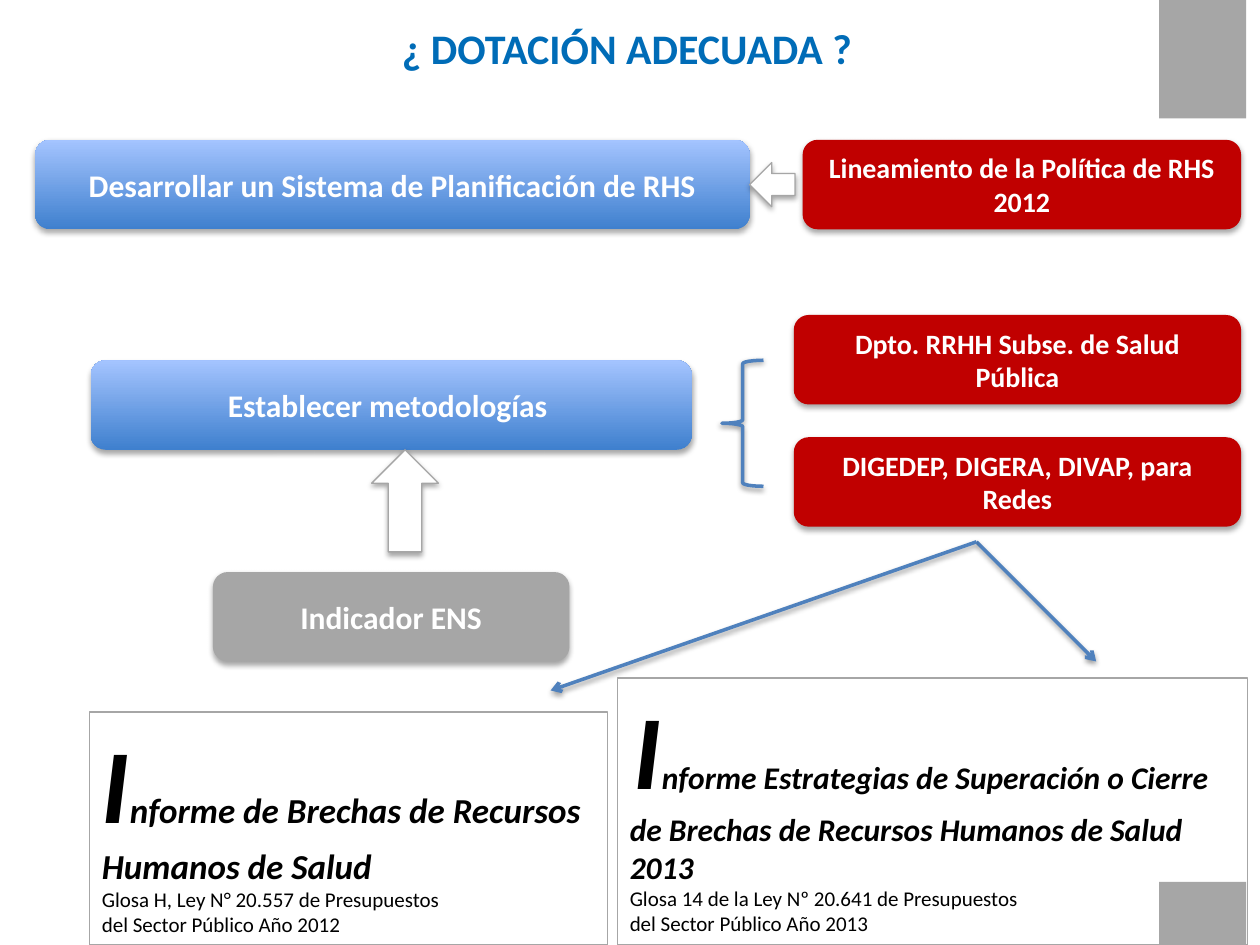
import pptx
import pptx.dml.color
import pptx.enum.dml
import pptx.enum.shapes
import pptx.enum.text
import pptx.oxml
import pptx.util
from lxml import etree

Inches = pptx.util.Inches
Pt = pptx.util.Pt
RGBColor = pptx.dml.color.RGBColor
Shape = pptx.enum.shapes.MSO_SHAPE
Align = pptx.enum.text.PP_ALIGN
Anchor = pptx.enum.text.MSO_ANCHOR

BLUE = RGBColor(0x00, 0x6C, 0xB7)
RED = RGBColor(0xC0, 0x00, 0x00)
GRAY = RGBColor(0xA6, 0xA6, 0xA6)
STEEL = RGBColor(0x4F, 0x81, 0xBD)
DEEP_BLUE = RGBColor(0x3F, 0x80, 0xCE)
PALE_BLUE = RGBColor(0xA4, 0xC4, 0xFF)
WHITE = RGBColor(0xFF, 0xFF, 0xFF)
BLACK = RGBColor(0x00, 0x00, 0x00)
GRADIENT = (DEEP_BLUE, PALE_BLUE)

SOFT = dict(color="000000", alpha=35, blur=3.1, distance=1.8, angle=90)
THIN = dict(color="000000", alpha=38, blur=3.1, distance=1.6, angle=90)


def add_text(para, text, size=18, color=BLACK, bold=False, italic=False, font="Calibri"):
    span = para.add_run()
    span.text = text
    span.font.name = font
    span.font.size = Pt(size)
    span.font.color.rgb = color
    span.font.bold = bold
    span.font.italic = italic


def set_effects(shape, shadow=None):
    effects = etree.SubElement(shape._element.spPr, pptx.oxml.ns.qn("a:effectLst"))
    if shadow:
        outer = etree.SubElement(
            effects,
            pptx.oxml.ns.qn("a:outerShdw"),
            blurRad=str(Pt(shadow["blur"])),
            dist=str(Pt(shadow["distance"])),
            dir=str(shadow["angle"] * 60000),
            rotWithShape="0",
        )
        tone = etree.SubElement(outer, pptx.oxml.ns.qn("a:srgbClr"), val=shadow["color"])
        etree.SubElement(tone, pptx.oxml.ns.qn("a:alpha"), val=str(shadow["alpha"] * 1000))


class PageBuilder:
    def __init__(self, page):
        self.page = page

    def shape(self, kind, bounds, fill=None, line=None, width=0.75, shadow=None):
        box = self.page.shapes.add_shape(kind, *map(Inches, bounds))
        if fill is None:
            box.fill.background()
        elif fill is GRADIENT:
            box.fill.gradient()
            box.fill.gradient_angle = 90
            for stop, color in zip(box.fill.gradient_stops, fill):
                stop.color.rgb = color
        else:
            box.fill.solid()
            box.fill.fore_color.rgb = fill
        if line is None:
            box.line.fill.background()
        else:
            box.line.color.rgb = line
            box.line.width = Pt(width)
        set_effects(box, shadow)
        return box

    def title(self, text, bounds):
        box = self.page.shapes.add_textbox(*map(Inches, bounds))
        box.text_frame.word_wrap = True
        para = box.text_frame.paragraphs[0]
        para.alignment = Align.CENTER
        add_text(para, text, size=24, color=BLUE, bold=True)

    def label(self, text, bounds, fill, size=18):
        box = self.shape(Shape.ROUNDED_RECTANGLE, bounds, fill, shadow=SOFT)
        box.text_frame.vertical_anchor = Anchor.MIDDLE
        para = box.text_frame.paragraphs[0]
        para.alignment = Align.CENTER
        add_text(para, text, size=size, color=WHITE, bold=True)

    def block_arrow(self, kind, bounds):
        self.shape(kind, bounds, WHITE, GRAY, shadow=SOFT)

    def report(self, bounds, heading, size, notes, lead=""):
        frame = self.shape(Shape.RECTANGLE, bounds, line=GRAY).text_frame
        frame.vertical_anchor = Anchor.TOP
        para = frame.paragraphs[0]
        para.alignment = Align.LEFT
        if lead:
            add_text(para, lead, size=10.5)
        add_text(para, heading[0], size=60, bold=True, italic=True)
        add_text(para, heading[1:], size=size, bold=True, italic=True)
        for note in notes:
            para = frame.add_paragraph()
            para.alignment = Align.LEFT
            add_text(para, note, size=12)

    def arrow(self, start, end):
        connector = self.page.shapes.add_connector(
            pptx.enum.shapes.MSO_CONNECTOR.STRAIGHT, *map(Inches, start + end)
        )
        connector.line.color.rgb = STEEL
        connector.line.width = Pt(2)
        etree.SubElement(
            connector.line._get_or_add_ln(), pptx.oxml.ns.qn("a:tailEnd"), type="arrow"
        )
        set_effects(connector, THIN)


def main():
    deck = pptx.Presentation()
    deck.slide_width = Inches(10)
    deck.slide_height = Inches(7.5)
    builder = PageBuilder(deck.slides.add_slide(deck.slide_layouts[6]))

    for top, height in ((0, 0.94), (7, 0.5)):
        builder.shape(Shape.RECTANGLE, (9.2, top, 0.69, height), GRAY)

    builder.title("¿ DOTACIÓN ADECUADA ?", (0.05, 0.13, 9.85, 0.51))

    for text, left, top, width, fill, size in (
        ("Desarrollar un Sistema de Planificación de RHS", 0.28, 1.11, 5.67, GRADIENT, 18),
        ("Establecer metodologías ", 0.72, 2.86, 4.77, GRADIENT, 18),
        ("Lineamiento de la Política de RHS 2012", 6.37, 1.11, 3.48, RED, 16),
        ("DIGEDEP, DIGERA, DIVAP, para Redes", 6.3, 3.47, 3.55, RED, 16),
        ("Dpto. RRHH Subse. de Salud Pública", 6.3, 2.5, 3.55, RED, 16),
        ("Indicador ENS", 1.69, 4.54, 2.83, GRAY, 18),
    ):
        builder.label(text, (left, top, width, 0.71), fill, size)

    builder.block_arrow(Shape.LEFT_ARROW, (5.95, 1.29, 0.36, 0.35))
    builder.block_arrow(Shape.UP_ARROW, (2.95, 3.57, 0.53, 0.81))
    builder.shape(Shape.LEFT_BRACE, (5.73, 2.86, 0.33, 1), line=STEEL, width=2, shadow=THIN)

    builder.report(
        (0.71, 5.65, 4.11, 1.85),
        "Informe de Brechas de Recursos Humanos de Salud",
        20,
        ("Glosa H, Ley N° 20.557 de Presupuestos", "del Sector Público Año 2012"),
    )
    builder.report(
        (4.9, 5.38, 5, 2.12),
        "Informe Estrategias de Superación o Cierre de Brechas de Recursos Humanos de Salud 2013",
        18,
        ("Glosa 14 de la Ley Nº 20.641 de Presupuestos", "del Sector Público Año 2013"),
        lead=" ",
    )

    for end in ((8.7, 5.25), (4.37, 5.48)):
        builder.arrow((7.75, 4.3), end)

    deck.save("out.pptx")


if __name__ == "__main__":
    main()
